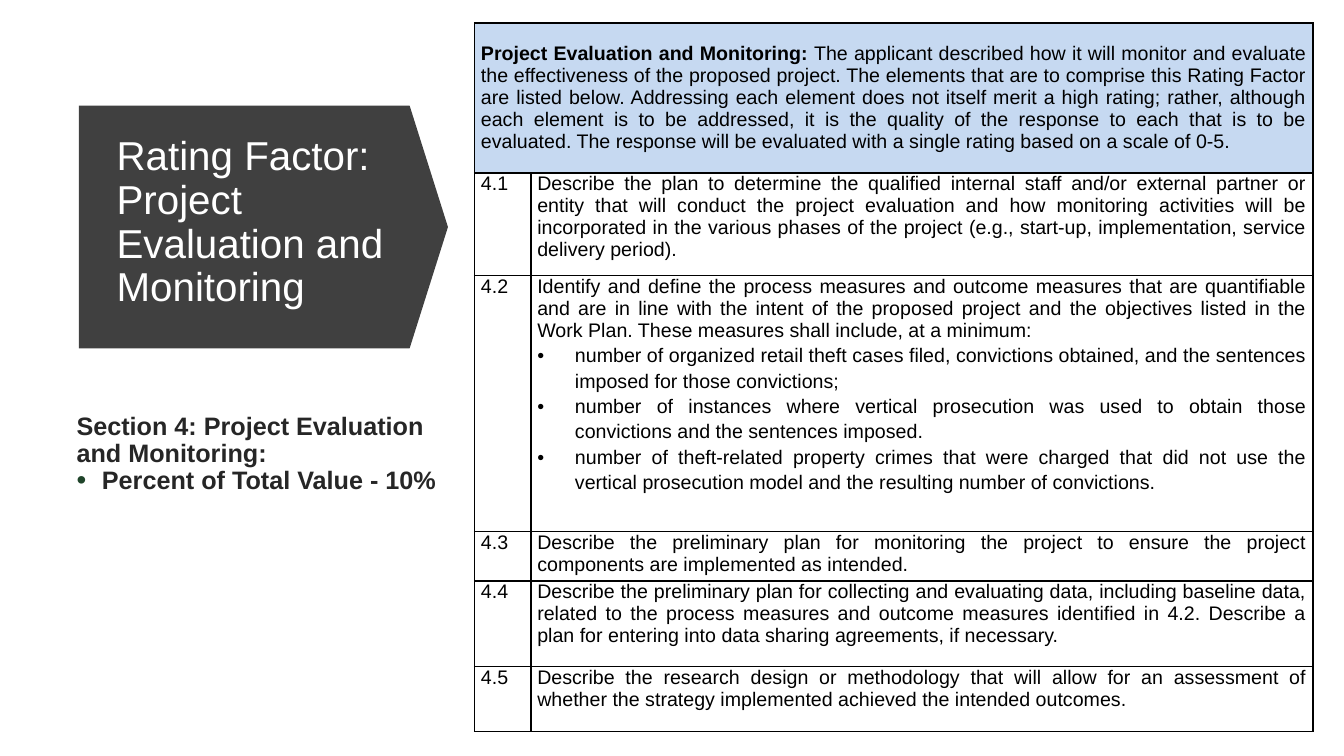
"""Build the slide on the project evaluation and monitoring rating factor."""
import pptx
import pptx.util
import pptx.dml.color
import pptx.enum.shapes
import pptx.enum.text
import lxml.etree

Cm = pptx.util.Cm
Pt = pptx.util.Pt
RGBColor = pptx.dml.color.RGBColor
ANCHOR = pptx.enum.text.MSO_ANCHOR
ALIGN = pptx.enum.text.PP_ALIGN
BLACK = RGBColor(0x00, 0x00, 0x00)
WHITE = RGBColor(0xFF, 0xFF, 0xFF)
DARK = RGBColor(0x40, 0x40, 0x40)
INK = RGBColor(0x26, 0x26, 0x26)
GREEN = RGBColor(0x1F, 0x44, 0x2A)
BLUE = RGBColor(0xC6, 0xD9, 0xF1)
NS = "http://schemas.openxmlformats.org/drawingml/2006/main"


def write(para, text, color, form, **look):
    """Add a run and set the paragraph format."""
    run = para.add_run()
    run.text = text
    run.font.color.rgb = color
    for key, val in {"name": "Arial", **look}.items():
        setattr(run.font, key, val)
    for key, val in form.items():
        setattr(para, key, val)


def bullet(para, indent, color, size):
    """Give the paragraph a hanging bullet."""
    props = para._p.get_or_add_pPr()
    props.set("marL", str(indent))
    props.set("indent", str(-indent))
    for tag, key, val in (("buClr", "", ""), ("buSzPct", "val", str(size * 1000)),
                          ("buFont", "typeface", "Arial"), ("buChar", "char", "•")):
        node = lxml.etree.SubElement(props, f"{{{NS}}}{tag}")
        if key:
            node.set(key, val)
        else:
            lxml.etree.SubElement(node, f"{{{NS}}}srgbClr").set("val", str(color))


deck = pptx.Presentation()
deck.slide_width, deck.slide_height = Cm(33.87), Cm(19.05)
slide = deck.slides.add_slide(deck.slide_layouts[6])
shapes = slide.shapes

arrow = shapes.add_shape(pptx.enum.shapes.MSO_SHAPE.DOWN_ARROW,
                         Cm(3.58), Cm(1.07), Cm(6.12), Cm(9.3))
arrow.rotation = 270
arrow.adjustments[0] = 1
arrow.adjustments[1] = 0.158
arrow.shadow.inherit = False
arrow.fill.solid()
arrow.fill.fore_color.rgb = DARK
arrow.line.fill.background()

title = shapes.add_textbox(Cm(2.69), Cm(2.97), Cm(7.95), Cm(5.31)).text_frame
title.word_wrap = True
title.vertical_anchor = ANCHOR.MIDDLE
write(title.paragraphs[0], "Rating Factor: Project Evaluation and Monitoring",
      WHITE, {"line_spacing": 0.9}, size=Pt(28.8))

body = shapes.add_textbox(Cm(1.68), Cm(10.29), Cm(10.34), Cm(2.41)).text_frame
body.word_wrap = True
bold = {"size": Pt(18), "bold": True}
write(body.paragraphs[0], "Section 4: Project Evaluation and Monitoring:",
      INK, {"line_spacing": 0.9}, **bold)
share = body.add_paragraph()
bullet(share, Cm(0.64), GREEN, 110)
write(share, "Percent of Total Value - 10%", INK, {"line_spacing": 0.9}, **bold)

HEAD = "Project Evaluation and Monitoring:"
INTRO = (
    " The applicant described how it will monitor and evaluate the effectiveness of the "
    "proposed project. The elements that are to comprise this Rating Factor are listed below. "
    "Addressing each element does not itself merit a high rating; rather, although each element "
    "is to be addressed, it is the quality of the response to each that is to be evaluated. "
    "The response will be evaluated with a single rating based on a scale of 0-5.")
ITEMS = [
    ["Describe the plan to determine the qualified internal staff and/or external partner or "
     "entity that will conduct the project evaluation and how monitoring activities will be "
     "incorporated in the various phases of the project (e.g., start-up, implementation, "
     "service delivery period)."],
    ["Identify and define the process measures and outcome measures that are quantifiable and "
     "are in line with the intent of the proposed project and the objectives listed in the "
     "Work Plan. These measures shall include, at a minimum:",
     "number of organized retail theft cases filed, convictions obtained, and the sentences "
     "imposed for those convictions;",
     "number of instances where vertical prosecution was used to obtain those convictions and "
     "the sentences imposed.",
     "number of theft-related property crimes that were charged that did not use the vertical "
     "prosecution model and the resulting number of convictions."],
    ["Describe the preliminary plan for monitoring the project to ensure the project components "
     "are implemented as intended."],
    ["Describe the preliminary plan for collecting and evaluating data, including baseline data, "
     "related to the process measures and outcome measures identified in 4.2. Describe a plan "
     "for entering into data sharing agreements, if necessary."],
    ["Describe the research design or methodology that will allow for an assessment of whether "
     "the strategy implemented achieved the intended outcomes."],
]
WIDTHS = [1.42, 19.71]
HEIGHTS = [3.78, 2.59, 6.45, 1.24, 2.16, 1.63]

table = shapes.add_table(len(HEIGHTS), len(WIDTHS), Cm(11.96), Cm(0.58),
                         Cm(sum(WIDTHS)), Cm(sum(HEIGHTS))).table
table.first_row = table.horz_banding = False
for col, width in zip(table.columns, WIDTHS):
    col.width = Cm(width)
for row, height in zip(table.rows, HEIGHTS):
    row.height = Cm(height)

pad = {"margin_left": Cm(0.16), "margin_right": Cm(0.16), "margin_top": 0, "margin_bottom": 0}
for num, row in enumerate(table.rows):
    for cell in row.cells:
        for key, val in pad.items():
            setattr(cell, key, val)
        props = cell._tc.get_or_add_tcPr()
        for side in "LRTB":
            edge = lxml.etree.SubElement(props, f"{{{NS}}}ln{side}", w=str(Pt(1)))
            fill = lxml.etree.SubElement(edge, f"{{{NS}}}solidFill")
            lxml.etree.SubElement(fill, f"{{{NS}}}srgbClr", val=str(BLACK))
        cell.fill.solid()
        cell.fill.fore_color.rgb = WHITE if num else BLUE

just = {"alignment": ALIGN.JUSTIFY}
top = table.cell(0, 0)
top.merge(table.cell(0, 1))
top.vertical_anchor = ANCHOR.MIDDLE
for text, heavy in ((HEAD, True), (INTRO, False)):
    write(top.text_frame.paragraphs[0], text, BLACK, just, size=Pt(14), bold=heavy)

for num, lines in enumerate(ITEMS, 1):
    label = table.cell(num, 0).text_frame.paragraphs[0]
    write(label, f"4.{num}", BLACK, just, size=Pt(14))
    frame = table.cell(num, 1).text_frame
    write(frame.paragraphs[0], lines[0], BLACK, just, size=Pt(14))
    for text in lines[1:]:
        para = frame.add_paragraph()
        bullet(para, Cm(0.95), BLACK, 100)
        write(para, text, BLACK, {**just, "line_spacing": 1.15}, size=Pt(14))

deck.save("out.pptx")
